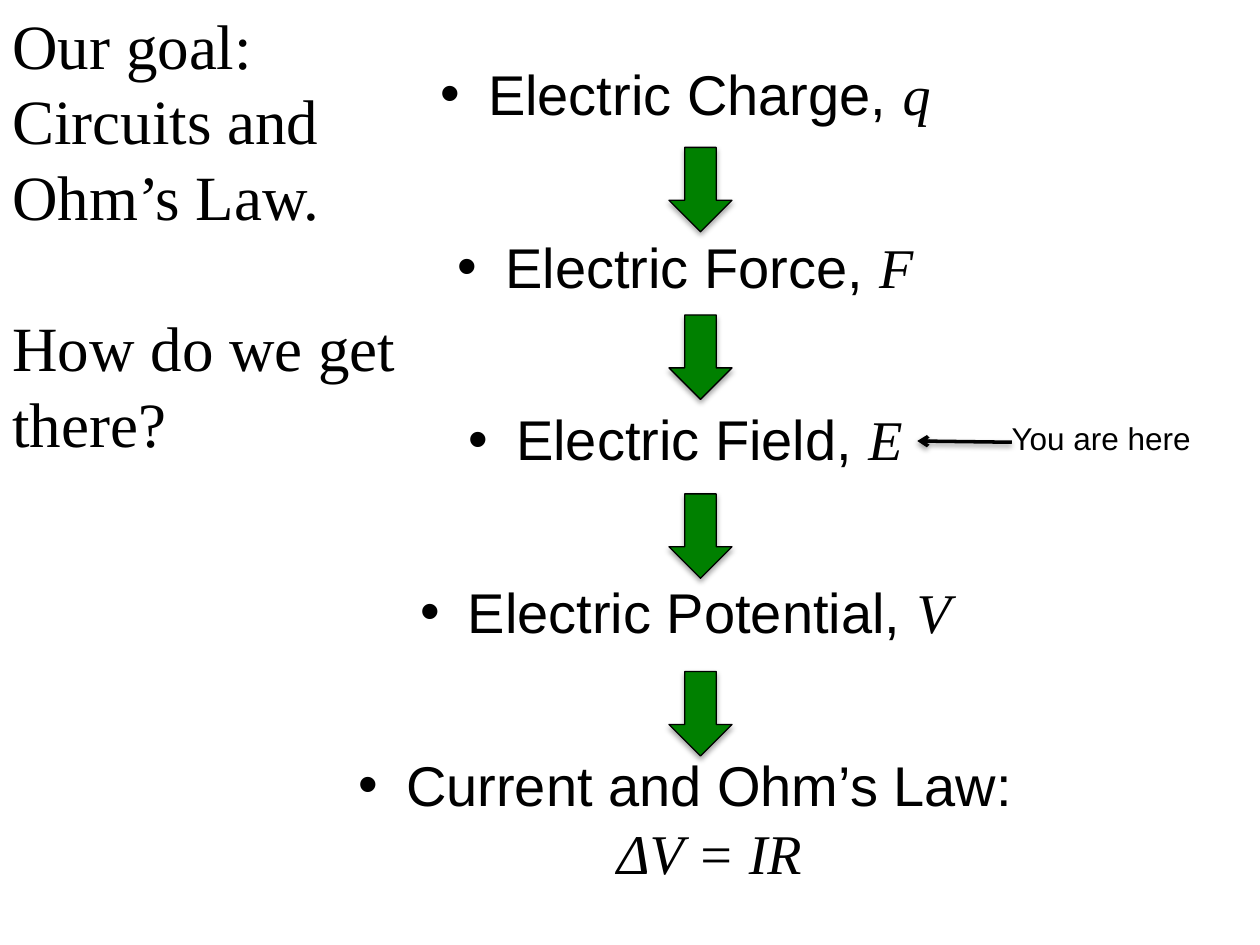
from typing import NamedTuple

from lxml import etree
from pptx import Presentation
from pptx import oxml, util as u
from pptx.dml.color import RGBColor
from pptx.enum import shapes, text
from pptx.oxml.ns import nsdecls, qn
from pptx.util import Inches

BLACK = RGBColor(0x00, 0x00, 0x00)
GREEN = RGBColor(0x00, 0x80, 0x00)
SANS = "Arial"
SERIF = "Times New Roman"


class Topic(NamedTuple):
    name: str
    symbol: str


class Shadow(NamedTuple):
    opacity: int
    blur: float
    distance: float


TOPICS = [
    Topic("Electric Charge, ", "q"),
    Topic("Electric Force, ", "F"),
    Topic("Electric Field, ", "E"),
    Topic("Electric Potential, ", "V"),
    Topic("Current and Ohm’s Law: ", "ΔV = IR"),
]
ARROW_TOPS = [1.17, 2.5, 3.92, 5.33]
GOAL_LINES = ["Our goal:", "Circuits and", "Ohm’s Law.", "How do we get there?"]
ARROW_SHADOW = Shadow(35, 3.1, 1.8)
POINTER_SHADOW = Shadow(38, 3.1, 1.6)


def add_run(paragraph, content: str, size: float, name: str, italic: bool = False) -> None:
    run = paragraph.add_run()
    run.text = content
    font_format = {"size": u.Pt(size), "name": name, "italic": italic}
    for attribute, value in font_format.items():
        setattr(run.font, attribute, value)
    run.font.color.rgb = BLACK


def add_shadow(shape, shadow: Shadow) -> None:
    effects = oxml.parse_xml(
        f'<a:effectLst {nsdecls("a")}>'
        f'<a:outerShdw blurRad="{u.Pt(shadow.blur)}" dist="{u.Pt(shadow.distance)}" '
        'dir="5400000" rotWithShape="0"><a:srgbClr val="000000">'
        f'<a:alpha val="{shadow.opacity * 1000}"/></a:srgbClr></a:outerShdw>'
        "</a:effectLst>"
    )
    shape._element.spPr.append(effects)


def add_text_frame(parent, left: float, top: float, width: float, height: float, wrap: bool = True):
    box = parent.add_textbox(Inches(left), Inches(top), Inches(width), Inches(height))
    box.text_frame.word_wrap = wrap
    return box.text_frame


def next_paragraph(frame, index: int):
    return frame.add_paragraph() if index else frame.paragraphs[0]


def format_bullet(paragraph) -> None:
    paragraph.alignment = text.PP_ALIGN.CENTER
    paragraph.space_after = u.Pt(54)
    properties = paragraph._p.get_or_add_pPr()
    indent = Inches(0.38)
    properties.set("marL", str(indent))
    properties.set("indent", str(-indent))
    space_before = etree.Element(qn("a:spcBef"))
    etree.SubElement(space_before, qn("a:spcPct"), val="20000")
    properties.insert(0, space_before)
    etree.SubElement(properties, qn("a:buFont"), typeface=SANS)
    etree.SubElement(properties, qn("a:buChar"), char="•")


def add_topics(slide) -> None:
    frame = add_text_frame(slide.shapes, 2.48, 0.42, 5.92, 6.75)
    for index, topic in enumerate(TOPICS):
        paragraph = next_paragraph(frame, index)
        format_bullet(paragraph)
        add_run(paragraph, topic.name, 32, SANS)
        add_run(paragraph, topic.symbol, 32, SERIF, italic=True)


def add_down_arrow(slide, top: float) -> None:
    arrow = slide.shapes.add_shape(
        shapes.MSO_SHAPE.DOWN_ARROW, Inches(5.31), Inches(top), Inches(0.5), Inches(0.67)
    )
    arrow.fill.solid()
    arrow.fill.fore_color.rgb = GREEN
    arrow.line.color.rgb = BLACK
    arrow.line.width = u.Pt(0.75)
    add_shadow(arrow, ARROW_SHADOW)


def add_location_marker(slide) -> None:
    group = slide.shapes.add_group_shape()
    pointer = group.shapes.add_connector(
        shapes.MSO_CONNECTOR.STRAIGHT, Inches(8.03), Inches(3.51), Inches(7.28), Inches(3.5)
    )
    pointer.line.color.rgb = BLACK
    pointer.line.width = u.Pt(2)
    etree.SubElement(pointer.line._get_or_add_ln(), qn("a:tailEnd"), type="arrow")
    add_shadow(pointer, POINTER_SHADOW)
    frame = add_text_frame(group.shapes, 7.93, 3.28, 1.64, 0.4, wrap=False)
    add_run(frame.paragraphs[0], "You are here", 18, SANS)


def add_goal(slide) -> None:
    frame = add_text_frame(slide.shapes, 0, 0, 3.27, 3.74)
    for index, line in enumerate(GOAL_LINES):
        paragraph = next_paragraph(frame, index)
        add_run(paragraph, line, 36, SERIF)
    frame.paragraphs[-1].space_before = u.Pt(43.2)


def main() -> None:
    presentation = Presentation()
    presentation.slide_width = Inches(10)
    presentation.slide_height = Inches(7.5)
    slide = presentation.slides.add_slide(presentation.slide_layouts[6])
    add_topics(slide)
    for top in ARROW_TOPS:
        add_down_arrow(slide, top)
    add_location_marker(slide)
    add_goal(slide)
    presentation.save("out.pptx")


if __name__ == "__main__":
    main()
